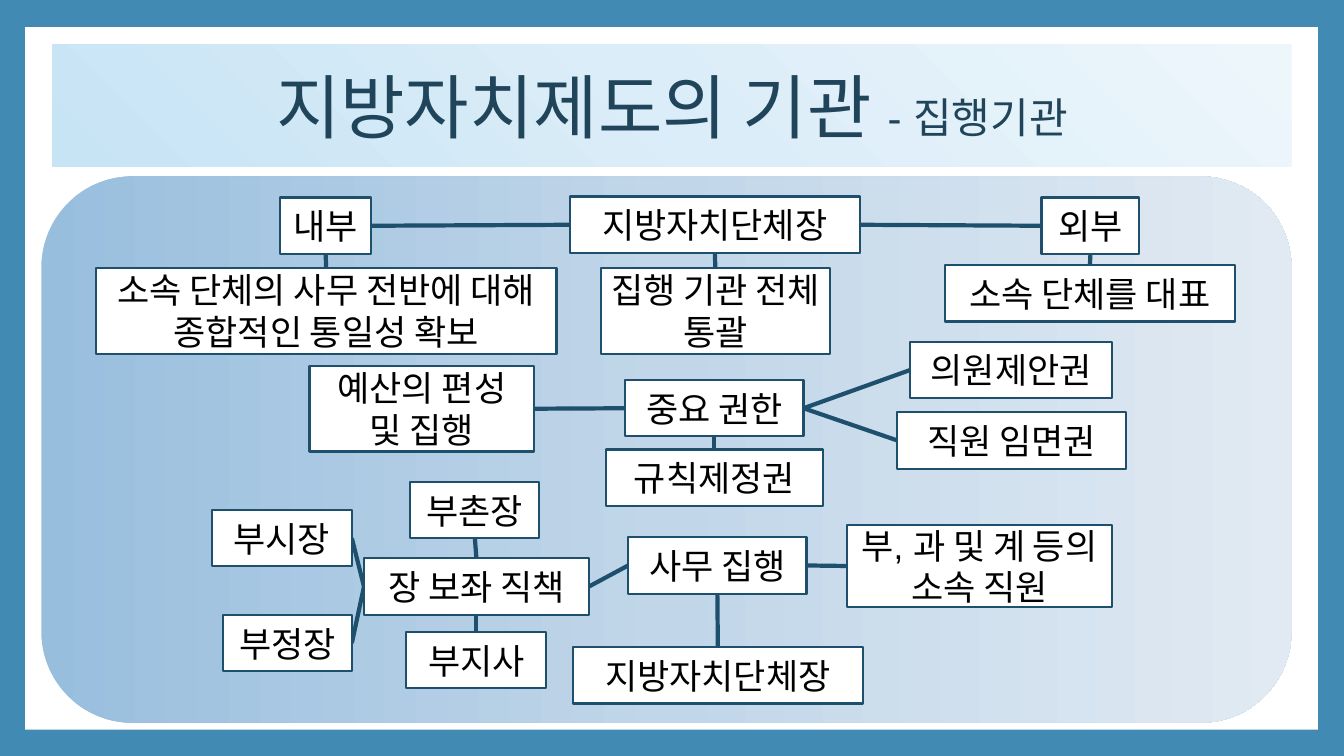
from lxml.etree import SubElement
from pptx import Presentation
from pptx.dml.color import RGBColor as Rgb
from pptx.enum.shapes import MSO_CONNECTOR as Connector, MSO_SHAPE as Preset
from pptx.enum.text import MSO_ANCHOR as Anchor, MSO_AUTO_SIZE as AutoSize, PP_ALIGN as Align
from pptx.oxml.ns import qn
from pptx.util import Inches, Pt

CELL = Inches(0.1)  # the slide is a grid of 133.33 columns by 75 rows
COLORS = {"frame": "418AB3", "paper": "FFFFFF", "line": "1E506E",
          "title": "20455A", "text": "000000"}
PANEL_STOPS = {0: "98BEDE", 50: "C1D6E9", 100: "E1EAF3"}
BANNER_STOPS = {0: "C7E4F5", 50: "DBEDF8", 100: "EDF6FB"}
PAPER_BOX = (2.5, 2.7, 128.2, 69.7)
PANEL_BOX = (4.1, 17.5, 124, 54.2)
BANNER_BOX = (5.2, 4.4, 122.9, 12.1)
ROW, TALL = 5.6, 8.5  # heights of one-line and two-line boxes
TOP, LEFT, BOTTOM, RIGHT = range(4)

# key: text, column, row, columns wide, rows high (within the panel)
NODES = {
    "proposal": ("의원제안권", 86.2, 16.4, 20, ROW),
    "appointment": ("직원 임면권", 84.9, 23.4, 22.7, ROW),
    "outside": ("외부", 99.2, 2.1, 9.7, ROW),
    "control": ("집행 기관 전체 통괄", 55.5, 9.1, 22.7, TALL),
    "represent": ("소속 단체를 대표", 89.6, 8.8, 28.8, ROW),
    "budget": ("예산의 편성 및 집행", 26.6, 18.8, 22.3, TALL),
    "head": ("지방자치단체장", 52.4, 2, 28.8, ROW),
    "inside": ("내부", 23.7, 2.1, 9, ROW),
    "affairs": ("사무 집행", 58.2, 35.8, 17.7, ROW),
    "rules": ("규칙제정권", 56, 27.1, 21.5, ROW),
    "unity": ("소속 단체의 사무 전반에 대해 종합적인 통일성 확보", 5.4, 9.1, 45.7, TALL),
    "staff": ("부, 과 및 계 등의 소속 직원", 79.9, 34.6, 26.3, 8.1),
    "village": ("부촌장", 36.6, 30.3, 12.8, ROW),
    "town": ("부정장", 18, 43.5, 12.8, ROW),
    "city": ("부시장", 16.9, 33.1, 13.9, ROW),
    "province": ("부지사", 36.2, 45.2, 13.9, ROW),
    "deputies": ("장 보좌 직책", 32, 37.9, 22.3, ROW),
    "powers": ("중요 권한", 57.9, 20.2, 17.7, ROW),
    "executor": ("지방자치단체장", 52.7, 46.7, 28.8, ROW),
}
# (start side, end side): pairs of boxes
LINKS = {
    (BOTTOM, TOP): [("inside", "unity"), ("head", "control"), ("outside", "represent"),
                    ("powers", "rules"), ("affairs", "executor"),
                    ("deputies", "province"), ("village", "deputies")],
    (RIGHT, LEFT): [("inside", "head"), ("head", "outside"), ("budget", "powers"),
                    ("powers", "proposal"), ("powers", "appointment"),
                    ("deputies", "affairs"), ("affairs", "staff"),
                    ("town", "deputies"), ("city", "deputies")],
}


def apply(target, formats):
    for attribute, value in formats.items():
        setattr(target, attribute, value)


def color(key):
    return Rgb.from_string(COLORS[key])


def place(shape, box):
    sides = [round(cells * CELL) for cells in box]
    apply(shape, dict(zip(("left", "top", "width", "height"), sides)))


def add_block(slide, preset, box, fill=None):
    block = slide.shapes.add_shape(preset, 0, 0, CELL, CELL)
    place(block, box)
    block.shadow.inherit = False
    block.line.fill.background()
    if fill:
        block.fill.solid()
        block.fill.fore_color.rgb = color(fill)
    return block


def set_gradient(shape, stops, radial=False):
    shape.fill.gradient()
    gradient = shape._element.spPr.find(qn("a:gradFill"))
    for child in list(gradient):
        gradient.remove(child)
    stop_list = SubElement(gradient, qn("a:gsLst"))
    for percent, hex_color in stops.items():
        stop = SubElement(stop_list, qn("a:gs"), pos=str(percent * 1000))
        SubElement(stop, qn("a:srgbClr"), val=hex_color)
    if radial:
        shade = SubElement(gradient, qn("a:path"), {"path": "circle"})
        SubElement(shade, qn("a:fillToRect"), t="100000", r="100000")
    else:
        SubElement(gradient, qn("a:lin"), ang="0", scaled="0")


def write(shape, runs, font_color):
    apply(shape.text_frame, {"word_wrap": True, "auto_size": AutoSize.NONE,
                             "vertical_anchor": Anchor.MIDDLE})
    paragraph = shape.text_frame.paragraphs[0]
    paragraph.alignment = Align.CENTER
    for text, size in runs:
        run = paragraph.add_run()
        run.text = text
        apply(run.font, {"name": "Arial", "size": Pt(size)})
        run.font.color.rgb = color(font_color)


def add_banner(slide, box):
    title = slide.shapes.title
    place(title, box)
    set_gradient(title, BANNER_STOPS, radial=True)
    write(title, [("지방자치제도의 기관 ", 50), ("- 집행기관", 30)], "title")


def add_backdrop(slide):
    slide.background.fill.solid()
    slide.background.fill.fore_color.rgb = color("frame")
    paper = add_block(slide, Preset.RECTANGLE, PAPER_BOX, "paper")
    panel = add_block(slide, Preset.ROUNDED_RECTANGLE, PANEL_BOX)
    set_gradient(panel, PANEL_STOPS)
    # The title stands in front of the backdrop
    for layer in (paper, panel):
        slide.shapes.title._element.addprevious(layer._element)


def add_node(slide, box, text):
    node = add_block(slide, Preset.RECTANGLE, box, "paper")
    node.line.color.rgb = color("line")
    node.line.width = Pt(1.5)
    write(node, [(text, 25)], "text")
    return node


def add_link(slide, start, start_side, end, end_side):
    link = slide.shapes.add_connector(Connector.STRAIGHT, 0, 0, 0, 0)
    link.begin_connect(start, start_side)
    link.end_connect(end, end_side)
    link.line.color.rgb = color("line")
    link.line.width = Pt(3)
    SubElement(link._element.spPr, qn("a:effectLst"))
    # Links run behind the boxes
    slide.shapes.title._element.addnext(link._element)


def add_diagram(slide, box):
    left, top = box[:2]
    nodes = {key: add_node(slide, (left + column, top + row, width, height), text)
             for key, (text, column, row, width, height) in NODES.items()}
    for (start_side, end_side), pairs in LINKS.items():
        for start, end in pairs:
            add_link(slide, nodes[start], start_side, nodes[end], end_side)


def main():
    deck = Presentation()
    apply(deck, {"slide_width": Inches(13.33), "slide_height": Inches(7.5)})
    slide = deck.slides.add_slide(deck.slide_layouts.get_by_name("Title Only"))
    add_backdrop(slide)
    add_banner(slide, BANNER_BOX)
    add_diagram(slide, PANEL_BOX)
    deck.save("out.pptx")


if __name__ == "__main__":
    main()
